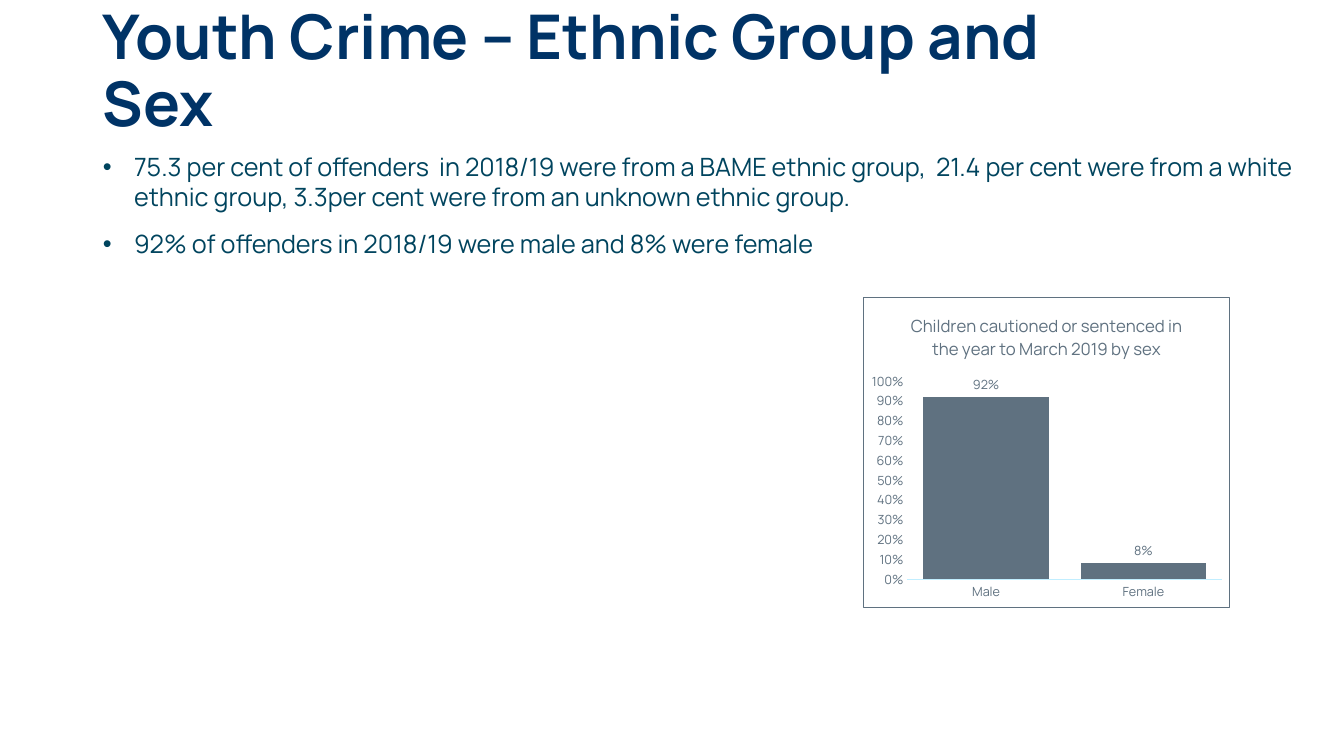
from dataclasses import dataclass

import lxml.etree
import pptx
import pptx.chart.chart
import pptx.chart.data
import pptx.dml.color
import pptx.enum.chart
import pptx.enum.text
import pptx.oxml
import pptx.oxml.ns
import pptx.slide
import pptx.util

FONT = "Manrope"
COLORS = {
    "navy": "003366",
    "teal": "00445E",
    "slate": "5F7180",
    "pale": "C1EEFF",
    "white": "FFFFFF",
}
TITLE_FONT = {"size": pptx.util.Pt(44), "bold": True}
BODY_FONT = {"size": pptx.util.Pt(18)}
CHART_TITLE_FONT = {"size": pptx.util.Pt(12), "bold": False}
LABEL_FONT = {"size": pptx.util.Pt(9), "bold": False}
PLOT_LAYOUT = {"x": 0.12, "y": 0.27, "w": 0.86, "h": 0.64}


@dataclass(frozen=True)
class Box:
    left: float
    top: float
    width: float
    height: float

    def lengths(self) -> list[pptx.util.Length]:
        return [pptx.util.Inches(v) for v in (self.left, self.top, self.width, self.height)]


@dataclass(frozen=True)
class TextBlock:
    placeholder: int
    box: Box
    lines: tuple[str, ...]
    color: str
    font: dict
    frame: dict
    paragraph: dict
    gap: float = 0
    hanging: float = 0


@dataclass(frozen=True)
class Share:
    sex: str
    value: float


BLOCKS = (
    TextBlock(
        0, Box(0.92, 0, 10.68, 1.45), ("Youth Crime – Ethnic Group and Sex",), "navy", TITLE_FONT,
        {"vertical_anchor": pptx.enum.text.MSO_ANCHOR.MIDDLE,
         "auto_size": pptx.enum.text.MSO_AUTO_SIZE.NONE},
        {"alignment": pptx.enum.text.PP_ALIGN.LEFT, "line_spacing": 0.9},
    ),
    TextBlock(
        1, Box(0.92, 1.45, 12.1, 1.18),
        ("75.3 per cent of offenders  in 2018/19 were from a BAME ethnic group,  21.4 per cent were "
         "from a white ethnic group, 3.3per cent were from an unknown ethnic group.",
         "92% of offenders in 2018/19 were male and 8% were female"),
        "teal", BODY_FONT,
        {"vertical_anchor": pptx.enum.text.MSO_ANCHOR.TOP,
         "auto_size": pptx.enum.text.MSO_AUTO_SIZE.SHAPE_TO_FIT_TEXT},
        {"alignment": pptx.enum.text.PP_ALIGN.LEFT, "line_spacing": 1.0},
        gap=12, hanging=0.31,
    ),
)
CHART_BOX = Box(8.56, 2.95, 3.64, 3.08)
CHART_TITLE = "Children cautioned or sentenced in the year to March 2019 by sex"
SHARES = (Share("Male", 0.92), Share("Female", 0.08))


def apply(target: object, values: dict) -> None:
    for name, value in values.items():
        setattr(target, name, value)


def rgb(color: str) -> pptx.dml.color.RGBColor:
    return pptx.dml.color.RGBColor.from_string(COLORS[color])


def set_font(font: object, color: str, values: dict) -> None:
    apply(font, {"name": FONT, **values})
    font.color.rgb = rgb(color)


def fill_placeholder(s: pptx.slide.Slide, block: TextBlock) -> None:
    sp = s.placeholders[block.placeholder]
    apply(sp, dict(zip(("left", "top", "width", "height"), block.box.lengths())))
    tf = sp.text_frame
    apply(tf, {"word_wrap": True, **block.frame})
    for i, line in enumerate(block.lines):
        p = tf.add_paragraph() if i else tf.paragraphs[0]
        apply(p, {"space_before": pptx.util.Pt(block.gap if i else 0), **block.paragraph})
        if block.hanging:
            indent = pptx.util.Inches(block.hanging)
            pPr = p._p.get_or_add_pPr()
            pPr.set("marL", str(indent))
            pPr.set("indent", str(-indent))
        r = p.add_run()
        r.text = line
        set_font(r.font, block.color, block.font)


def format_axes(chart: pptx.chart.chart.Chart) -> None:
    for axis in (chart.category_axis, chart.value_axis):
        apply(axis, {
            "has_major_gridlines": False,
            "major_tick_mark": pptx.enum.chart.XL_TICK_MARK.NONE,
            "minor_tick_mark": pptx.enum.chart.XL_TICK_MARK.NONE,
        })
        set_font(axis.tick_labels.font, "slate", LABEL_FONT)
    line = chart.category_axis.format.line
    line.color.rgb = rgb("pale")
    line.width = pptx.util.Pt(0.75)
    apply(chart.value_axis, {"minimum_scale": 0, "maximum_scale": 1, "major_unit": 0.1})
    apply(chart.value_axis.tick_labels, {"number_format": "0%", "number_format_is_linked": False})
    chart.value_axis.format.line.fill.background()


def frame_chart(chart: pptx.chart.chart.Chart) -> None:
    qn = pptx.oxml.ns.qn
    ns = pptx.oxml.ns.nsdecls("c", "a")
    area = chart.element.find(qn("c:chart"))
    area.addnext(pptx.oxml.parse_xml(
        f'<c:spPr {ns}><a:solidFill><a:srgbClr val="{COLORS["white"]}"/></a:solidFill>'
        f'<a:ln w="{pptx.util.Pt(0.75)}"><a:solidFill><a:srgbClr val="{COLORS["slate"]}"/>'
        '</a:solidFill></a:ln></c:spPr>'
    ))
    plot_area = area.find(qn("c:plotArea"))
    for layout in plot_area.findall(qn("c:layout")):
        plot_area.remove(layout)
    layout = pptx.oxml.parse_xml(
        f'<c:layout {ns}><c:manualLayout><c:layoutTarget val="inner"/>'
        '<c:xMode val="edge"/><c:yMode val="edge"/></c:manualLayout></c:layout>'
    )
    for name, value in PLOT_LAYOUT.items():
        lxml.etree.SubElement(layout[0], qn(f"c:{name}")).set("val", str(value))
    plot_area.insert(0, layout)


def add_sex_chart(s: pptx.slide.Slide) -> None:
    data = pptx.chart.data.CategoryChartData(number_format="0%")
    data.categories = [share.sex for share in SHARES]
    data.add_series("Series 1", [share.value for share in SHARES])
    chart = s.shapes.add_chart(
        pptx.enum.chart.XL_CHART_TYPE.COLUMN_CLUSTERED, *CHART_BOX.lengths(), data
    ).chart
    set_font(chart.font, "teal", {"size": pptx.util.Pt(10)})
    apply(chart, {"has_legend": False, "has_title": True})
    chart.chart_title.include_in_layout = False
    r = chart.chart_title.text_frame.paragraphs[0].add_run()
    r.text = CHART_TITLE
    set_font(r.font, "slate", CHART_TITLE_FONT)
    plot = chart.plots[0]
    apply(plot, {"gap_width": 25, "overlap": -27, "vary_by_categories": False,
                 "has_data_labels": True})
    fill = plot.series[0].format.fill
    fill.solid()
    fill.fore_color.rgb = rgb("slate")
    apply(plot.data_labels, {
        "show_value": True, "number_format": "0%", "number_format_is_linked": False,
        "position": pptx.enum.chart.XL_LABEL_POSITION.OUTSIDE_END,
    })
    set_font(plot.data_labels.font, "slate", LABEL_FONT)
    format_axes(chart)
    frame_chart(chart)


def main() -> None:
    prs = pptx.Presentation()
    prs.slide_width = pptx.util.Inches(13.33)
    prs.slide_height = pptx.util.Inches(7.5)
    s = prs.slides.add_slide(prs.slide_layouts[1])
    for block in BLOCKS:
        fill_placeholder(s, block)
    add_sex_chart(s)
    prs.save("out.pptx")


if __name__ == "__main__":
    main()
